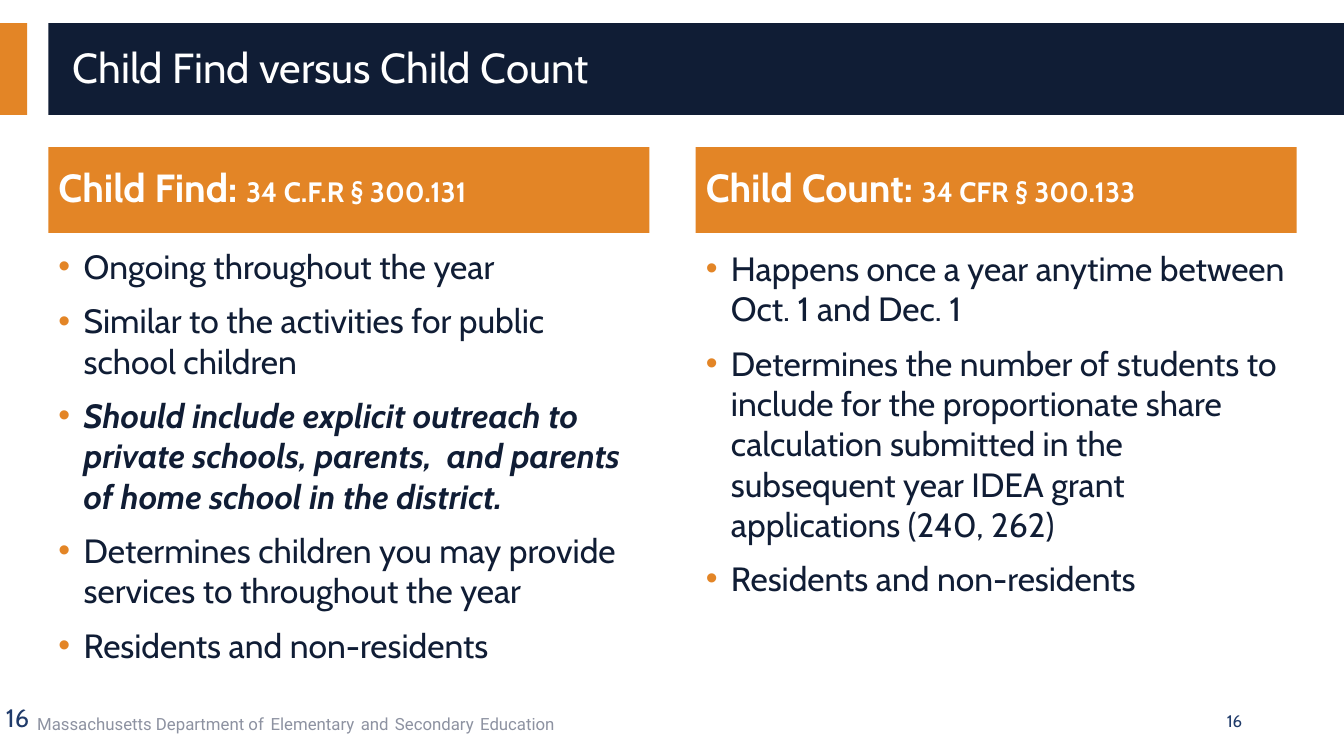
import dataclasses
import typing

import lxml.etree
import pptx
import pptx.dml.color
import pptx.enum.shapes
import pptx.enum.text
import pptx.oxml.ns
import pptx.util

EMU_PER_PX = 9144
ORANGE = pptx.dml.color.RGBColor(0xE3, 0x85, 0x26)
NAVY = pptx.dml.color.RGBColor(0x10, 0x1D, 0x35)
BLUE = pptx.dml.color.RGBColor(0x20, 0x3B, 0x6A)
GREY = pptx.dml.color.RGBColor(0x8D, 0x92, 0xA1)
WHITE = pptx.dml.color.RGBColor(0xFF, 0xFF, 0xFF)
COLUMN_WIDTH = 596
ANCHOR = pptx.enum.text.MSO_ANCHOR
ALIGN = pptx.enum.text.PP_ALIGN


class Area(typing.NamedTuple):
    left: int
    top: int
    width: int
    height: int


@dataclasses.dataclass(frozen=True)
class Span:
    text: str
    size: int
    color: pptx.dml.color.RGBColor
    font: str = "Cabin"
    bold: bool = False
    italic: bool = False


@dataclasses.dataclass(frozen=True)
class Bar:
    area: Area
    color: pptx.dml.color.RGBColor


@dataclasses.dataclass(frozen=True)
class Label:
    area: Area
    spans: list[Span]
    wrap: bool = True
    anchor: typing.Any = ANCHOR.TOP
    align: typing.Any = ALIGN.LEFT


@dataclasses.dataclass(frozen=True)
class Column:
    left: int
    list_top: int
    heading: str
    citation: str
    points: list[Span]
    heading_index: int
    list_index: int


def point(text: str, strong: bool = False) -> Span:
    return Span(text, 24, NAVY, bold=strong, italic=strong)


def footer_spans() -> list[Span]:
    spans = []
    for words in ("Massachusetts Department of", "Elementary", "and", "Secondary", "Education"):
        if spans:
            spans.append(Span(" ", 18, BLUE, "Roboto"))
        spans.append(Span(words, 12, GREY, "Roboto"))
    return spans


BARS = [
    Bar(Area(0, 23, 27, 91), ORANGE),
    Bar(Area(48, 23, 1285, 91), NAVY),
]
LABELS = [
    Label(Area(27, 695, 844, 40), footer_spans()),
    Label(Area(-4, 692, 51, 40), [Span("16", 18, BLUE)], wrap=False),
    Label(Area(942, 695, 300, 40), [Span("16", 12, BLUE)], anchor=ANCHOR.MIDDLE, align=ALIGN.RIGHT),
]
COLUMNS = [
    Column(48, 239, "Child Find: ", "34 C.F.R § 300.131", [
        point("Ongoing throughout the year"),
        point("Similar to the activities for public school children"),
        point("Should include explicit outreach to private schools, parents,  "
              "and parents of home school in the district.", strong=True),
        point("Determines children you may provide services to throughout the year"),
        point("Residents and non-residents"),
    ], 1, 2),
    Column(690, 241, "Child Count: ", "34 CFR § 300.133", [
        point("Happens once a year anytime between Oct. 1 and Dec. 1"),
        point("Determines the number of students to include for the proportionate share "
              "calculation submitted in the subsequent year IDEA grant applications (240, 262)"),
        point("Residents and non-residents"),
    ], 3, 4),
]


def px(length: int) -> pptx.util.Emu:
    return pptx.util.Emu(length * EMU_PER_PX)


def place(box: typing.Any, area: Area) -> None:
    box.left, box.top, box.width, box.height = map(px, area)


def add_spans(para: typing.Any, spans: list[Span]) -> None:
    for span in spans:
        run = para.add_run()
        run.text = span.text
        run.font.name = span.font
        run.font.size = pptx.util.Pt(span.size)
        run.font.color.rgb = span.color
        run.font.bold = span.bold
        run.font.italic = span.italic


def add_bullet(para: typing.Any) -> None:
    name = pptx.oxml.ns.qn
    properties = para._p.get_or_add_pPr()
    properties.set("marL", str(px(25)))
    properties.set("indent", str(px(-25)))
    color = lxml.etree.SubElement(properties, name("a:buClr"))
    lxml.etree.SubElement(color, name("a:srgbClr"), val=str(ORANGE))
    lxml.etree.SubElement(properties, name("a:buFont"), typeface="Arial")
    lxml.etree.SubElement(properties, name("a:buChar"), char="•")


def prepare_frame(box: typing.Any, anchor: typing.Any, wrap: bool = True) -> typing.Any:
    frame = box.text_frame
    frame.word_wrap = wrap
    frame.auto_size = pptx.enum.text.MSO_AUTO_SIZE.NONE
    frame.vertical_anchor = anchor
    return frame


def fill_line(box: typing.Any, area: Area, spans: list[Span]) -> None:
    place(box, area)
    para = prepare_frame(box, ANCHOR.MIDDLE).paragraphs[0]
    para.alignment = ALIGN.LEFT
    para.line_spacing = 0.9
    para.space_before = pptx.util.Pt(0)
    add_spans(para, spans)


def fill_list(box: typing.Any, area: Area, points: list[Span]) -> None:
    place(box, area)
    frame = prepare_frame(box, ANCHOR.TOP)
    for index, span in enumerate(points):
        para = frame.add_paragraph() if index else frame.paragraphs[0]
        add_bullet(para)
        para.space_before = pptx.util.Pt(10 if index else 0)
        add_spans(para, [span])


def add_bar(page: typing.Any, bar: Bar) -> None:
    box = page.shapes.add_shape(pptx.enum.shapes.MSO_SHAPE.RECTANGLE, *map(px, bar.area))
    box.shadow.inherit = False
    box.fill.solid()
    box.fill.fore_color.rgb = bar.color
    box.line.fill.background()
    page.shapes.element.insert(2, box.element)


def add_label(page: typing.Any, label: Label) -> None:
    box = page.shapes.add_textbox(*map(px, label.area))
    para = prepare_frame(box, label.anchor, label.wrap).paragraphs[0]
    para.alignment = label.align
    add_spans(para, label.spans)


def add_column(page: typing.Any, column: Column) -> None:
    heading = page.placeholders[column.heading_index]
    fill_line(heading, Area(column.left, 146, COLUMN_WIDTH, 85), [
        Span(column.heading, 28, WHITE, bold=True),
        Span(column.citation, 20, WHITE, bold=True),
    ])
    heading.fill.solid()
    heading.fill.fore_color.rgb = ORANGE
    fill_list(page.placeholders[column.list_index],
              Area(column.left, column.list_top, COLUMN_WIDTH, 415), column.points)


def main() -> None:
    deck = pptx.Presentation()
    deck.slide_width = pptx.util.Inches(13.33)
    deck.slide_height = pptx.util.Inches(7.5)
    page = deck.slides.add_slide(deck.slide_layouts.get_by_name("Comparison"))
    fill_line(page.shapes.title, Area(62, 32, 1250, 74),
              [Span("Child Find versus Child Count", 30, WHITE)])
    for bar in BARS:
        add_bar(page, bar)
    for column in COLUMNS:
        add_column(page, column)
    for label in LABELS:
        add_label(page, label)
    deck.save("out.pptx")


if __name__ == "__main__":
    main()
